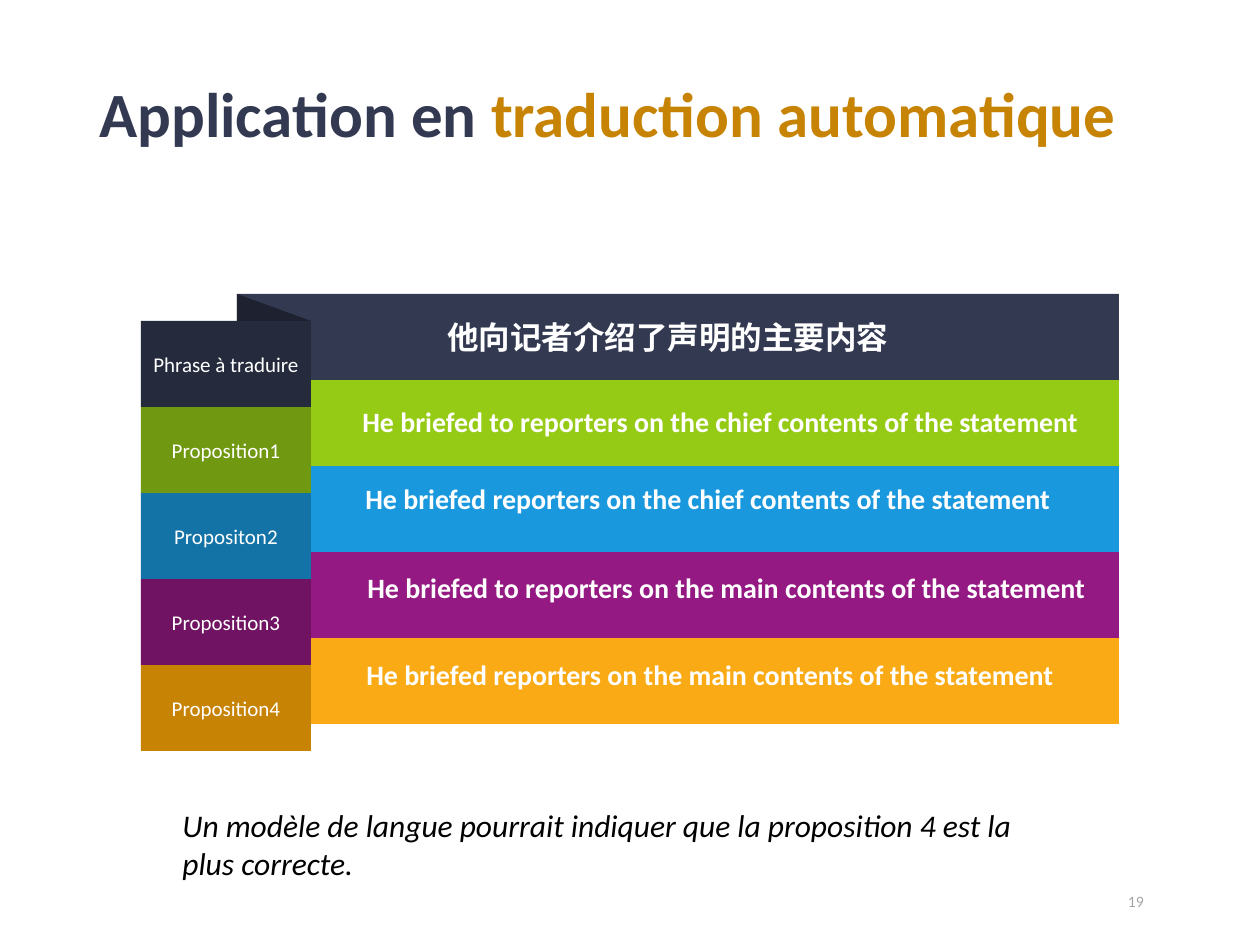
from dataclasses import dataclass

from pptx import Presentation
from pptx import util as u
from pptx.dml.color import RGBColor
from pptx.enum import shapes, text
from pptx.oxml.ns import qn
from lxml import etree

SCALE = 914400 / 126
ANCHOR = text.MSO_ANCHOR
ALIGN = text.PP_ALIGN


@dataclass(frozen=True)
class Theme:
    font: str = "Calibri"
    white: str = "FFFFFF"
    black: str = "000000"
    navy: str = "323951"
    ochre: str = "C78304"
    gray: str = "A6A6A6"
    fold_opacity: int = 40
    title_size: int = 36
    body_size: int = 18
    caption_size: int = 16
    label_size: int = 12
    number_size: int = 9


THEME = Theme()

BAND_LEFT, BAND_TOP, BAND_WIDTH, ROW_HEIGHT = 237, 294, 882, 86
TAB_LEFT, TAB_WIDTH, FOLD_HEIGHT = 141, 170, 27
FOLD_WIDTH = TAB_LEFT + TAB_WIDTH - BAND_LEFT

ROWS = [
    ("Phrase à traduire", "323951", "252B3D", "他向记者介绍了声明的主要内容",
     THEME.body_size, (435, 312, 514, 50)),
    ("Proposition1", "95CA15", "709810",
     "He briefed to reporters on the chief contents of the statement",
     THEME.caption_size, (350, 398, 795, 47)),
    ("Propositon2", "1A98DD", "1372A6",
     "He briefed reporters on the chief contents of the statement",
     THEME.caption_size, (353, 475, 815, 84)),
    ("Proposition3", "951983", "701362",
     "He briefed to reporters on the main contents of the statement",
     THEME.caption_size, (355, 564, 750, 47)),
    ("Proposition4", "FAAA15", "C78304",
     "He briefed reporters on the main contents of the statement",
     THEME.caption_size, (354, 651, 756, 47)),
]


def px(value):
    return u.Emu(round(value * SCALE))


def style_run(run, size, color, bold=False, italic=False):
    run.font.name = THEME.font
    run.font.size = u.Pt(size)
    run.font.bold = bold
    run.font.italic = italic
    run.font.color.rgb = RGBColor.from_string(color)


def add_text(slide, box, content, size, color, anchor=ANCHOR.TOP,
             align=ALIGN.LEFT, bold=False, italic=False):
    shape = slide.shapes.add_textbox(*map(px, box))
    frame = shape.text_frame
    frame.word_wrap = True
    frame.vertical_anchor = anchor
    frame.text = content
    paragraph = frame.paragraphs[0]
    paragraph.alignment = align
    style_run(paragraph.runs[0], size, color, bold, italic)
    return paragraph


def add_block(slide, box, color, kind=shapes.MSO_SHAPE.RECTANGLE):
    shape = slide.shapes.add_shape(kind, *map(px, box))
    shape.shadow.inherit = False
    shape.fill.solid()
    shape.fill.fore_color.rgb = RGBColor.from_string(color)
    shape.line.fill.background()
    return shape


def add_tab(slide, top, color, label):
    tab = add_block(slide, (TAB_LEFT, top, TAB_WIDTH, ROW_HEIGHT), color)
    frame = tab.text_frame
    frame.margin_left = frame.margin_right = 0
    frame.vertical_anchor = ANCHOR.MIDDLE
    frame.text = label
    paragraph = frame.paragraphs[0]
    paragraph.alignment = ALIGN.CENTER
    style_run(paragraph.runs[0], THEME.label_size, THEME.white)


def add_fold(slide):
    fold = add_block(slide, (BAND_LEFT, BAND_TOP, FOLD_WIDTH, FOLD_HEIGHT),
                     THEME.black, shapes.MSO_SHAPE.RIGHT_TRIANGLE)
    color = next(fold.element.spPr.iter(qn("a:srgbClr")))
    etree.SubElement(color, qn("a:alpha"), val=str(THEME.fold_opacity * 1000))


def add_rows(slide):
    for index, row in reversed(list(enumerate(ROWS))):
        label, band_color, tab_color, sentence, size, box = row
        top = BAND_TOP + index * ROW_HEIGHT
        add_block(slide, (BAND_LEFT, top, BAND_WIDTH, ROW_HEIGHT), band_color)
        add_tab(slide, top + FOLD_HEIGHT, tab_color, label)
        add_text(slide, box, sentence, size, THEME.white, bold=True)
    add_fold(slide)


def add_title(slide):
    paragraph = add_text(slide, (87, 39, 1086, 156), "Application en ",
                         THEME.title_size, THEME.navy, ANCHOR.MIDDLE, bold=True)
    paragraph.line_spacing = 0.9
    highlight = paragraph.add_run()
    highlight.text = "traduction automatique"
    style_run(highlight, THEME.title_size, THEME.ochre, bold=True)


def main():
    presentation = Presentation()
    presentation.slide_width, presentation.slide_height = px(1260), px(945)
    slide = presentation.slides.add_slide(presentation.slide_layouts[6])
    add_title(slide)
    add_text(slide, (1099, 876, 74, 50), "19", THEME.number_size, THEME.gray,
             ANCHOR.MIDDLE, ALIGN.CENTER)
    add_rows(slide)
    add_text(slide, (170, 800, 910, 89),
             "Un modèle de langue pourrait indiquer que la proposition 4 est la "
             "plus correcte.", THEME.body_size, THEME.black, italic=True)
    presentation.save("out.pptx")


if __name__ == "__main__":
    main()
